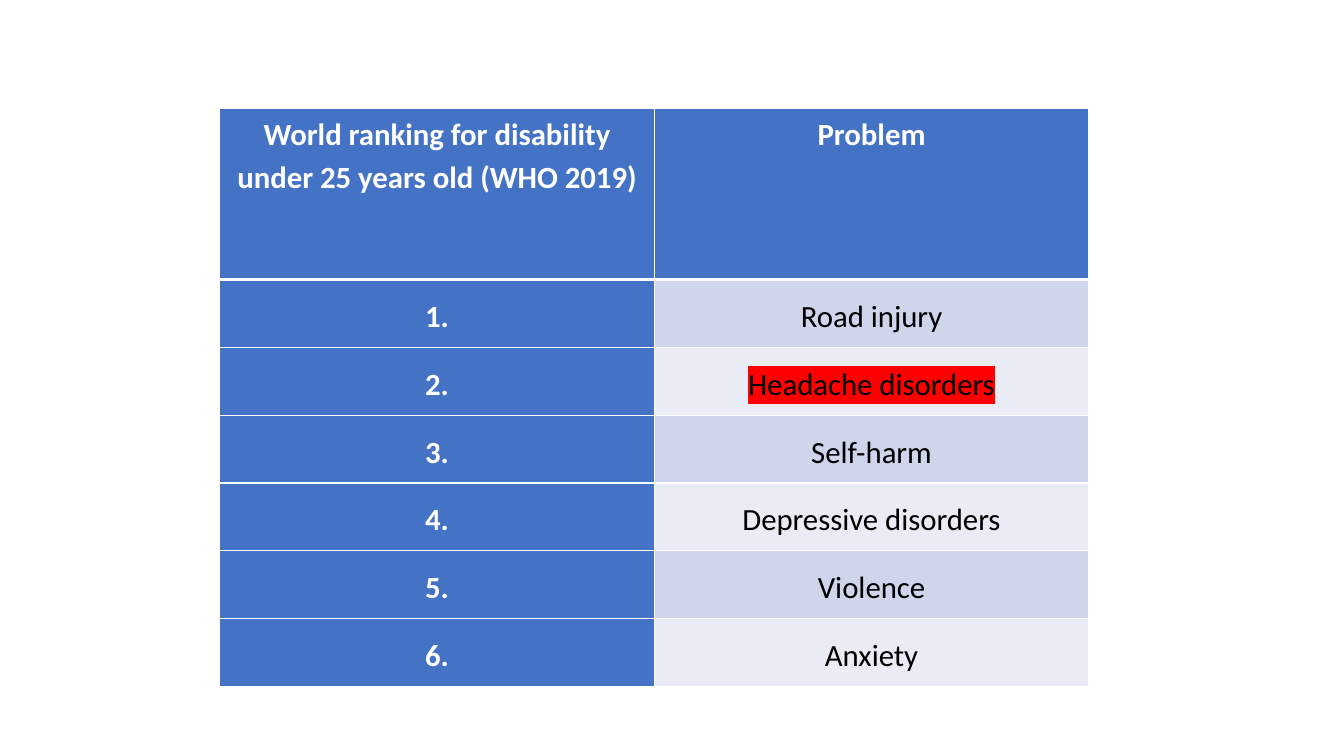
from pptx import Presentation
from pptx.dml.color import RGBColor
from pptx.enum.text import PP_ALIGN
from pptx.oxml import parse_xml
from pptx.oxml.ns import nsdecls
from pptx.util import Cm, Pt

WHITE, BLACK, BLUE, RED = "FFFFFF", "000000", "4472C4", "FF0000"
BANDS = ["CFD5EA", "E9EBF5"]


def color(code):
    return RGBColor.from_string(code)


def paint(tag, code, attrs=""):
    return parse_xml(
        f'<a:{tag} {nsdecls("a")} {attrs}><a:solidFill>'
        f'<a:srgbClr val="{code}"/></a:solidFill></a:{tag}>'
    )


# Slide
deck = Presentation()
deck.slide_width, deck.slide_height = Cm(33.87), Cm(19.05)
slide = deck.slides.add_slide(deck.slide_layouts[6])

# Ranking data
head = ["World ranking for disability under 25 years old (WHO 2019)", "Problem"]
items = ["Road injury", "Headache disorders", "Self-harm",
         "Depressive disorders", "Violence", "Anxiety"]
rows = [head] + [[f"{rank}.", item] for rank, item in enumerate(items, 1)]

# Table grid
frame = slide.shapes.add_table(len(rows), 2, Cm(5.54), Cm(2.72), Cm(21.9), Cm(14.58))
table = frame.table
for col in table.columns:
    col.width = Cm(10.95)
for r, row in enumerate(table.rows):
    row.height = Cm(1.71) if r else Cm(4.32)

# Cells
for r, texts in enumerate(rows):
    for c, text in enumerate(texts):
        cell = table.cell(r, c)
        dark = r == 0 or c == 0
        cell.margin_left = cell.margin_right = Cm(0.18)
        cell.margin_top = Cm(0) if r else Cm(0.07)
        cell.margin_bottom = Cm(0)

        # Borders, thicker between header and body
        props = cell._tc.get_or_add_tcPr()
        for side in "LRTB":
            thick = (r, side) in [(0, "B"), (1, "T")]
            props.append(paint(f"ln{side}", WHITE, f'w="{Pt(3 if thick else 1)}"'))
        cell.fill.solid()
        cell.fill.fore_color.rgb = color(BLUE if dark else BANDS[(r - 1) % 2])

        # Text
        para = cell.text_frame.paragraphs[0]
        para.alignment = PP_ALIGN.CENTER
        para.line_spacing = 1.5 if r else 1.15
        para.space_after = Pt(10 if r else 0)
        run = para.add_run()
        run.text = text
        font = run.font
        font.name, font.size, font.bold = "Calibri", Pt(22), dark
        font.color.rgb = color(WHITE if dark else BLACK)

        # Highlight sits between the text fill and the typeface
        if text == "Headache disorders":
            mark = parse_xml(f'<a:highlight {nsdecls("a")}><a:srgbClr val="{RED}"/></a:highlight>')
            run._r.rPr.find("{*}latin").addprevious(mark)

deck.save("out.pptx")
